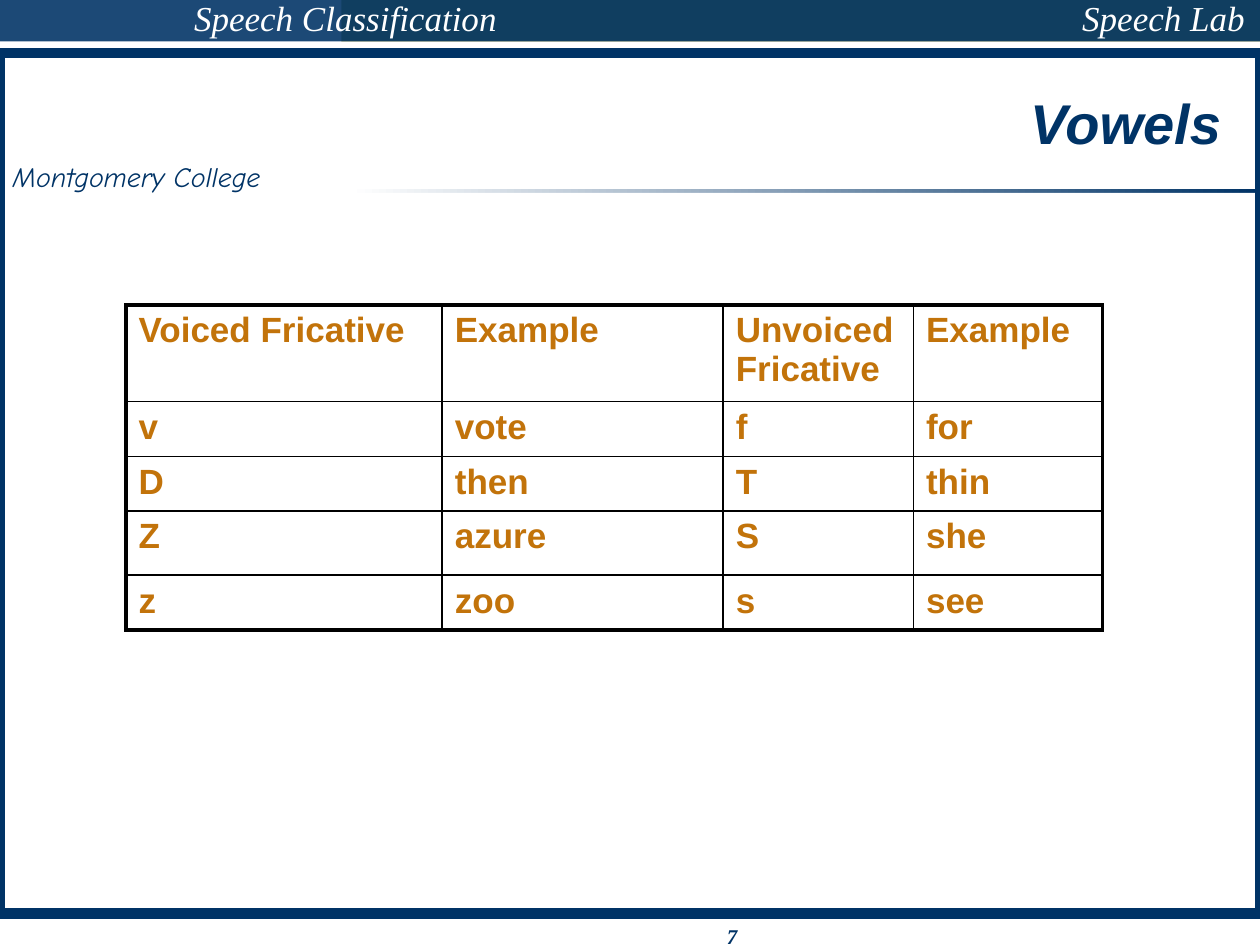
from dataclasses import dataclass
from typing import Optional

from lxml.etree import SubElement
from pptx import Presentation
from pptx.dml.color import RGBColor
from pptx.enum.shapes import MSO_SHAPE as Shape
from pptx.enum.text import MSO_ANCHOR as Anchor, PP_ALIGN as Align
from pptx.oxml.ns import qn
from pptx.util import Inches, Pt

NAVY = RGBColor(0x00, 0x33, 0x66)
OLIVE = RGBColor(0x99, 0x99, 0x33)
WHITE = RGBColor(0xFF, 0xFF, 0xFF)
OCHRE = RGBColor(0xC2, 0x73, 0x0A)

FRICATIVES = [
    ("Voiced Fricative", "Example", "Unvoiced Fricative", "Example"),
    ("v", "vote", "f", "for"),
    ("D", "then", "T", "thin"),
    ("Z", "azure", "S", "she"),
    ("z", "zoo", "s", "see"),
]
COLUMN_WIDTHS = (2.51, 2.23, 1.51, 1.5)
ROW_HEIGHTS = (0.72, 0.41, 0.41, 0.51, 0.41)
OUTER_WIDTH, INNER_WIDTH = 2.25, 1


@dataclass(frozen=True)
class Box:
    """Position and size in inches."""
    left: float
    top: float
    width: float
    height: float

    def lengths(self):
        return [Inches(v) for v in (self.left, self.top, self.width, self.height)]


@dataclass(frozen=True)
class Label:
    """A free-standing line of text."""
    text: str
    box: Box
    size: int
    font: str
    align: Align = Align.LEFT
    bold: bool = False
    anchor: Anchor = Anchor.TOP
    spacing: Optional[float] = None
    wrap: bool = True


LABELS = [
    Label("7", Box(5.67, 7.28, 0.58, 0.3), 12, "Times New Roman", bold=True),
    Label("Montgomery College", Box(0, 1.22, 2.17, 0.37), 16, "Comic Neue",
          Align.CENTER, wrap=False),
    Label("Vowels", Box(2.08, 0.75, 7.71, 0.53), 32, "Arial", Align.RIGHT,
          True, Anchor.BOTTOM, 0.8),
]


def write(frame, text: str, *, size: int, font: str, color: RGBColor,
          bold: bool = False, italic: bool = False, align: Align = Align.LEFT,
          spacing: Optional[float] = None, right_tab: Optional[float] = None) -> None:
    """Fill a text frame with one formatted paragraph."""
    paragraph = frame.paragraphs[0]
    paragraph.alignment = align
    if spacing:
        paragraph.line_spacing = spacing
    if right_tab:
        tabs = SubElement(paragraph._p.get_or_add_pPr(), qn("a:tabLst"))
        SubElement(tabs, qn("a:tab"), pos=str(Inches(right_tab)), algn="r")
    run = paragraph.add_run()
    run.text = text
    run.font.size, run.font.name = Pt(size), font
    run.font.bold, run.font.italic = bold, italic
    run.font.color.rgb = color


def add_rectangle(slide, box: Box, fill: Optional[RGBColor] = None):
    """Add a plain rectangle without outline or shadow."""
    rectangle = slide.shapes.add_shape(Shape.RECTANGLE, *box.lengths())
    rectangle.shadow.inherit = False
    rectangle.line.fill.background()
    if fill is None:
        rectangle.fill.background()
    else:
        rectangle.fill.solid()
        rectangle.fill.fore_color.rgb = fill
    return rectangle


def add_header(slide) -> None:
    """Add the translucent bar with the topic and the lab name."""
    add_rectangle(slide, Box(2.71, 0, 7.29, 0.33), OLIVE)
    bar = add_rectangle(slide, Box(0, 0, 10, 0.33), NAVY)
    tint = bar.fill._xPr.find(qn("a:solidFill"))[0]
    SubElement(tint, qn("a:alpha"), val="89000")
    frame = bar.text_frame
    frame.word_wrap = True
    frame.vertical_anchor = Anchor.MIDDLE
    frame.margin_left, frame.margin_right = Inches(1.54), Inches(0.1)
    frame.margin_top, frame.margin_bottom = 0, Inches(0.05)
    write(frame, "Speech Classification\tSpeech Lab", size=20,
          font="Times New Roman", color=WHITE, italic=True, right_tab=8.34)


def add_rule(slide) -> None:
    """Add the fading rule below the title."""
    fade = add_rectangle(slide, Box(2.78, 1.5, 7.22, 0.08), NAVY)
    fade.fill.gradient()
    fade.fill.gradient_angle = 0
    for stop, color in zip(fade.fill.gradient_stops, (WHITE, NAVY)):
        stop.color.rgb = color
    add_rectangle(slide, Box(2.78, 1.53, 7.22, 0.08), WHITE)


def add_frame(slide) -> None:
    """Add the heavy outline around the content."""
    outline = add_rectangle(slide, Box(0, 0.42, 10, 6.83))
    outline.line.color.rgb = NAVY
    outline.line.width = Pt(6)


def add_label(slide, label: Label) -> None:
    """Add a text box in the slide's navy italic."""
    frame = slide.shapes.add_textbox(*label.box.lengths()).text_frame
    frame.word_wrap = label.wrap
    frame.vertical_anchor = label.anchor
    write(frame, label.text, size=label.size, font=label.font, color=NAVY,
          bold=label.bold, italic=True, align=label.align, spacing=label.spacing)


def set_border(cell, side: str, width: float) -> None:
    """Draw one black cell border."""
    line = SubElement(cell._tc.get_or_add_tcPr(), qn(f"a:ln{side}"), w=str(Pt(width)))
    SubElement(SubElement(line, qn("a:solidFill")), qn("a:srgbClr"), val="000000")


def add_fricatives(slide) -> None:
    """Add the table of voiced and unvoiced fricatives."""
    box = Box(1, 2.42, sum(COLUMN_WIDTHS), sum(ROW_HEIGHTS))
    table = slide.shapes.add_table(
        len(ROW_HEIGHTS), len(COLUMN_WIDTHS), *box.lengths()).table
    table.first_row = table.horz_banding = False
    for column, width in zip(table.columns, COLUMN_WIDTHS):
        column.width = Inches(width)
    for row, height in zip(table.rows, ROW_HEIGHTS):
        row.height = Inches(height)
    last_row, last_column = len(ROW_HEIGHTS) - 1, len(COLUMN_WIDTHS) - 1
    for r, words in enumerate(FRICATIVES):
        for c, word in enumerate(words):
            cell = table.cell(r, c)
            outer = {"L": c == 0, "R": c == last_column, "T": r == 0, "B": r == last_row}
            for side, is_outer in outer.items():
                set_border(cell, side, OUTER_WIDTH if is_outer else INNER_WIDTH)
            cell.fill.background()
            write(cell.text_frame, word, size=20, font="Arial", color=OCHRE, bold=True)


def main() -> None:
    """Build the slide and save it."""
    deck = Presentation()
    deck.slide_width, deck.slide_height = Inches(10), Inches(7.5)
    slide = deck.slides.add_slide(deck.slide_layouts[6])
    add_header(slide)
    add_rule(slide)
    add_frame(slide)
    for label in LABELS:
        add_label(slide, label)
    add_fricatives(slide)
    deck.save("out.pptx")


if __name__ == "__main__":
    main()
